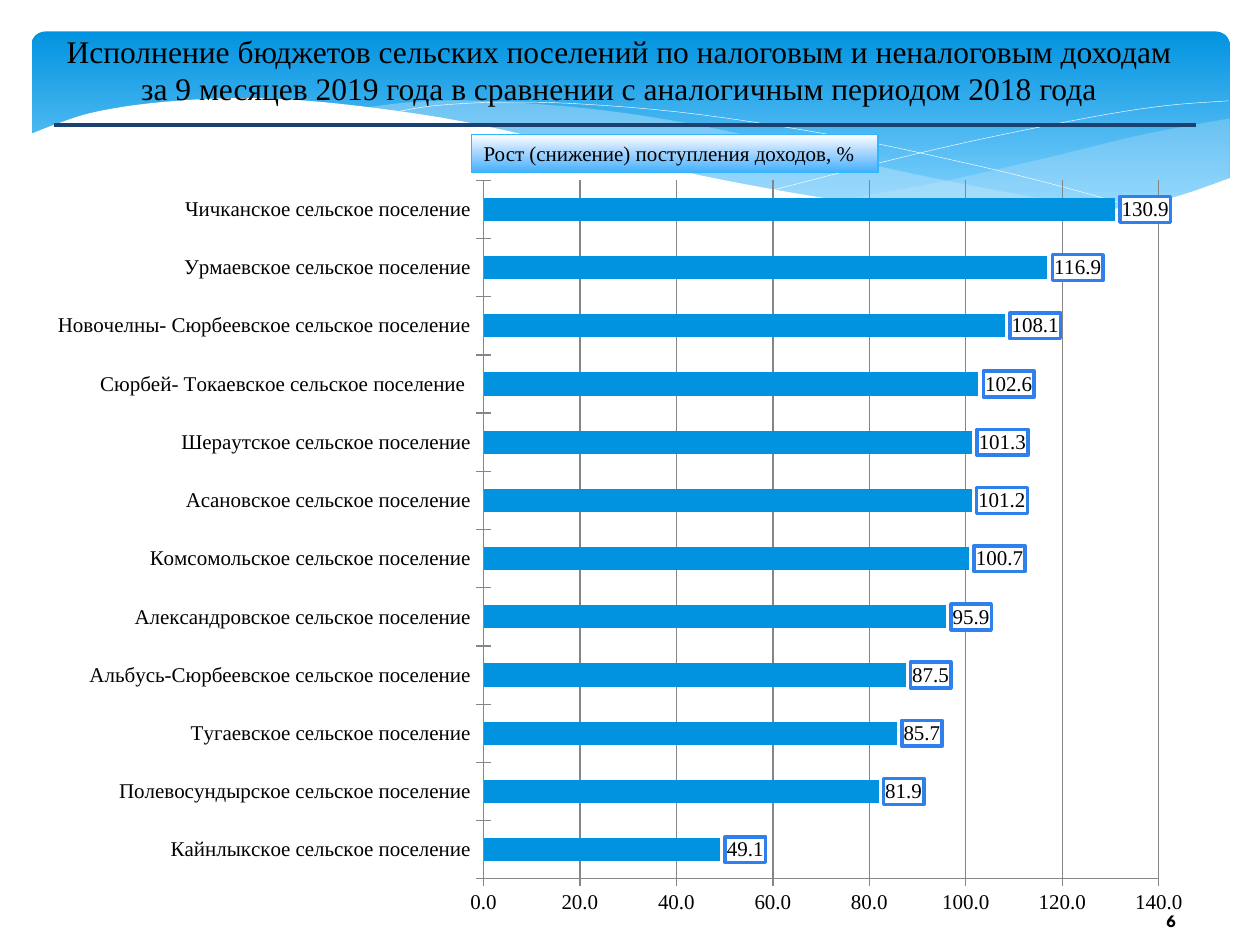
from copy import deepcopy

from lxml.etree import SubElement
from pptx import Presentation
from pptx.chart.data import CategoryChartData
from pptx.dml.color import RGBColor
from pptx.enum.chart import XL_CHART_TYPE as ChartType, XL_LABEL_POSITION as LabelPosition
from pptx.enum.chart import XL_TICK_MARK as TickMark
from pptx.enum.shapes import MSO_CONNECTOR as Connector, MSO_SHAPE as Shape
from pptx.enum.text import MSO_ANCHOR as Anchor, MSO_AUTO_SIZE as AutoSize, PP_ALIGN as Align
from pptx.oxml import parse_xml
from pptx.oxml.ns import nsdecls, qn
from pptx.util import Inches, Pt

COLORS = {
    "blue": "0293E0", "sky": "83D3FE", "mist": "C6E7FC", "white": "FFFFFF",
    "black": "000000", "navy": "1B4171", "pale": "ACD7FF", "azure": "42B0FD",
    "edge": "31B6FD", "label": "2F80ED", "grid": "868686",
}
SERIF = "Times New Roman"

TITLE = ("Исполнение бюджетов сельских поселений по налоговым и неналоговым доходам "
         "за 9 месяцев 2019 года в сравнении с аналогичным периодом 2018 года")
INCOME_GROWTH = {
    "Кайнлыкское сельское поселение": 49.1,
    "Полевосундырское сельское поселение": 81.9,
    "Тугаевское сельское поселение": 85.7,
    "Альбусь-Сюрбеевское сельское поселение": 87.5,
    "Александровское сельское поселение": 95.9,
    "Комсомольское сельское поселение": 100.7,
    "Асановское сельское поселение": 101.2,
    "Шераутское сельское поселение": 101.3,
    "Сюрбей- Токаевское сельское поселение ": 102.6,
    "Новочелны- Сюрбеевское сельское поселение": 108.1,
    "Урмаевское сельское поселение": 116.9,
    "Чичканское сельское поселение": 130.9,
}

RIGHT_TOP = [(9.76, 0.94), (9.06, 1.07), (8.32, 1.25), (7.53, 1.43), (6.61, 1.6)]
RIGHT_BOTTOM = [(6.61, 1.6), (7.18, 1.67), (7.81, 1.72), (8.35, 1.72), (8.89, 1.66),
                (9.35, 1.56), (9.76, 1.41)]
MIDDLE_TOP = [(8.93, 1.67), (8.07, 1.54), (7.06, 1.34), (6.13, 1.12), (5.41, 0.97),
              (4.65, 0.86), (3.8, 0.8), (3.28, 0.81), (2.86, 0.86)]
MIDDLE_BOTTOM = [(2.86, 0.86), (3.62, 0.97), (4.49, 1.16), (5.66, 1.43), (6.5, 1.58),
                 (7.22, 1.68), (7.96, 1.73), (8.48, 1.72), (8.93, 1.67)]
LONG_LINE = [(3.09, 0.9), (3.44, 0.84), (4.01, 0.81), (4.69, 0.83), (5.56, 0.91),
             (6.65, 1.08), (7.6, 1.28), (8.31, 1.45), (9.07, 1.66)]
SHORT_LINE = [(6.13, 1.51), (6.95, 1.3), (7.76, 1.11), (8.66, 0.93), (9.24, 0.84), (9.75, 0.8)]
WHITE_EDGE = [(9.77, 1.41), (9.3, 1.57), (8.75, 1.67), (8.09, 1.71), (7.26, 1.67),
              (6.47, 1.56), (5.55, 1.39), (4.47, 1.14), (3.65, 0.96), (2.92, 0.85),
              (2.3, 0.79), (1.77, 0.78), (1.19, 0.82), (0.75, 0.89), (0.46, 0.98), (0.23, 1.07)]


def color(name):
    """Return the named colour."""
    return RGBColor.from_string(COLORS[name])


def apply_format(target, **values):
    """Set each given attribute on the target."""
    for name, value in values.items():
        setattr(target, name, value)


def smooth(points, steps=5):
    """Return a Catmull-Rom curve through the points."""
    ends = [points[0], *points, points[-1]]
    curve = []
    for a, b, c, d in zip(ends, ends[1:], ends[2:], ends[3:]):
        for t in (step / steps for step in range(steps)):
            curve.append(tuple(
                (2 * q + (r - p) * t + (2 * p - 5 * q + 4 * r - s) * t ** 2
                 + (3 * q - p - 3 * r + s) * t ** 3) / 2
                for p, q, r, s in zip(a, b, c, d)))
    return curve + [points[-1]]


def fill_gradient(fill, stops):
    """Fill from top to bottom with (position, colour) stops."""
    fill.gradient()
    fill.gradient_angle = 270
    first = fill.gradient_stops[0]._element
    for _ in stops[2:]:
        first.addnext(deepcopy(first))
    for stop, (position, name) in zip(fill.gradient_stops, stops):
        stop.position = position
        stop.color.rgb = color(name)


def write(frame, text, size, font=SERIF, bold=False, align=Align.LEFT):
    """Write one formatted paragraph into the frame."""
    para = frame.paragraphs[0]
    para.alignment = align
    span = para.add_run()
    span.text = text
    apply_format(span.font, name=font, size=Pt(size), bold=bold)
    span.font.color.rgb = color("black")


def add_box(page, kind, place, stops):
    """Add a shape with a gradient fill and no line."""
    box = page.shapes.add_shape(kind, *map(Inches, place))
    box.shadow.inherit = False
    fill_gradient(box.fill, stops)
    box.line.fill.background()
    return box


def add_wave(page, points, fill=None, opacity=100):
    """Add a filled wave, or a thin white curve when no fill is given."""
    start, *others = [tuple(map(Inches, point)) for point in points]
    builder = page.shapes.build_freeform(*start)
    builder.add_line_segments(others, close=fill is not None)
    wave = builder.convert_to_shape()
    wave.shadow.inherit = False
    if fill is None:
        wave.fill.background()
        wave.line.color.rgb = color("white")
        wave.line.width = Pt(0.25)
        return
    wave.fill.solid()
    wave.fill.fore_color.rgb = color(fill)
    wave.line.fill.background()
    if opacity < 100:
        tint = wave.element.spPr.find(".//" + qn("a:srgbClr"))
        SubElement(tint, qn("a:alpha"), val=str(opacity * 1000))


def add_header(page):
    """Draw the blue band with its waves."""
    band = add_box(page, Shape.ROUNDED_RECTANGLE, (0.25, 0.25, 9.51, 1.56),
                   [(0, "blue"), (0.9, "sky")])
    band.adjustments[0] = 0.07
    add_wave(page, smooth(RIGHT_TOP) + smooth(RIGHT_BOTTOM), "mist", 29)
    add_wave(page, smooth(MIDDLE_TOP) + smooth(MIDDLE_BOTTOM), "mist", 40)
    add_wave(page, smooth(LONG_LINE))
    add_wave(page, smooth(SHORT_LINE))
    add_wave(page, smooth(WHITE_EDGE) + [(0.23, 2.24), (9.77, 2.24)], "white")


def add_title(page):
    """Place the title in front of the header with a rule below."""
    title = page.shapes.title
    title.element.getparent().append(title.element)
    apply_format(title, left=Inches(0.35), top=Inches(0.29), width=Inches(9.13), height=Inches(0.79))
    apply_format(title.text_frame, word_wrap=True, auto_size=AutoSize.NONE,
                 vertical_anchor=Anchor.MIDDLE, margin_top=0, margin_bottom=Inches(0.27))
    write(title.text_frame, TITLE, 18, align=Align.CENTER)
    rule = page.shapes.add_connector(Connector.STRAIGHT, *map(Inches, (0.43, 0.99, 9.49, 0.99)))
    rule.line.color.rgb = color("navy")
    rule.line.width = Pt(2.25)
    SubElement(rule.element.spPr, qn("a:effectLst"))


def style_labels(plot):
    """Show the values in white boxes with blue borders."""
    plot.has_data_labels = True
    labels = plot.data_labels
    apply_format(labels, show_value=True, number_format="0.0", number_format_is_linked=False,
                 position=LabelPosition.OUTSIDE_END)
    apply_format(labels.font, name=SERIF, size=Pt(12))
    labels.font.color.rgb = color("black")
    frame = parse_xml(
        f'<c:spPr {nsdecls("c", "a")}><a:solidFill><a:srgbClr val="{COLORS["white"]}"/></a:solidFill>'
        f'<a:ln w="{Pt(2)}"><a:solidFill><a:srgbClr val="{COLORS["label"]}"/></a:solidFill></a:ln></c:spPr>')
    labels._element.find(qn("c:txPr")).addprevious(frame)


def add_growth_chart(page):
    """Add the bar chart of income growth."""
    data = CategoryChartData(number_format="0.0")
    data.categories = list(INCOME_GROWTH)
    data.add_series("Series 1", list(INCOME_GROWTH.values()))
    place = map(Inches, (0.27, 1.31, 9.29, 6.06))
    chart = page.shapes.add_chart(ChartType.BAR_CLUSTERED, *place, data).chart
    apply_format(chart, has_legend=False, has_title=False)
    apply_format(chart.font, name="Calibri", size=Pt(18))
    chart.font.color.rgb = color("black")
    for axis in (chart.category_axis, chart.value_axis):
        apply_format(axis, major_tick_mark=TickMark.CROSS, minor_tick_mark=TickMark.NONE)
        apply_format(axis.tick_labels.font, name=SERIF, size=Pt(12))
        axis.format.line.color.rgb = color("grid")
    scale = chart.value_axis
    apply_format(scale, minimum_scale=0, maximum_scale=140, major_unit=20, has_major_gridlines=True)
    apply_format(scale.tick_labels, number_format="0.0", number_format_is_linked=False)
    scale.major_gridlines.format.line.color.rgb = color("grid")
    plot = chart.plots[0]
    apply_format(plot, gap_width=150, vary_by_categories=False)
    bars = plot.series[0].format.fill
    bars.solid()
    bars.fore_color.rgb = color("blue")
    style_labels(plot)
    area = chart._chartSpace.find(".//" + qn("c:plotArea"))
    for old in area.findall(qn("c:layout")):
        area.remove(old)
    layout = {"layoutTarget": "inner", "xMode": "edge", "yMode": "edge",
              "x": 0.384, "y": 0.02, "w": 0.577, "h": 0.915}
    parts = "".join(f'<c:{name} val="{value}"/>' for name, value in layout.items())
    area.insert(0, parse_xml(
        f'<c:layout {nsdecls("c")}><c:manualLayout>{parts}</c:manualLayout></c:layout>'))


def add_caption(page):
    """Add the caption above the chart."""
    box = add_box(page, Shape.RECTANGLE, (3.74, 1.07, 3.23, 0.3),
                  [(0, "white"), (0.44, "pale"), (1, "azure")])
    box.line.color.rgb = color("edge")
    box.line.width = Pt(0.75)
    apply_format(box.text_frame, word_wrap=True, vertical_anchor=Anchor.TOP,
                 auto_size=AutoSize.SHAPE_TO_FIT_TEXT)
    write(box.text_frame, "Рост (снижение) поступления доходов, %", 12)


def add_page_number(page):
    """Add the page number."""
    box = page.shapes.add_textbox(*map(Inches, (8.72, 7.11, 1.15, 0.4)))
    apply_format(box.text_frame, word_wrap=True, vertical_anchor=Anchor.MIDDLE)
    write(box.text_frame, "6", 10, "League Spartan", True, Align.CENTER)


def main():
    """Build the slide and save it."""
    deck = Presentation()
    apply_format(deck, slide_width=Inches(10), slide_height=Inches(7.5))
    page = deck.slides.add_slide(deck.slide_layouts[5])
    for add_part in (add_header, add_page_number, add_title, add_growth_chart, add_caption):
        add_part(page)
    deck.save("out.pptx")


if __name__ == "__main__":
    main()
